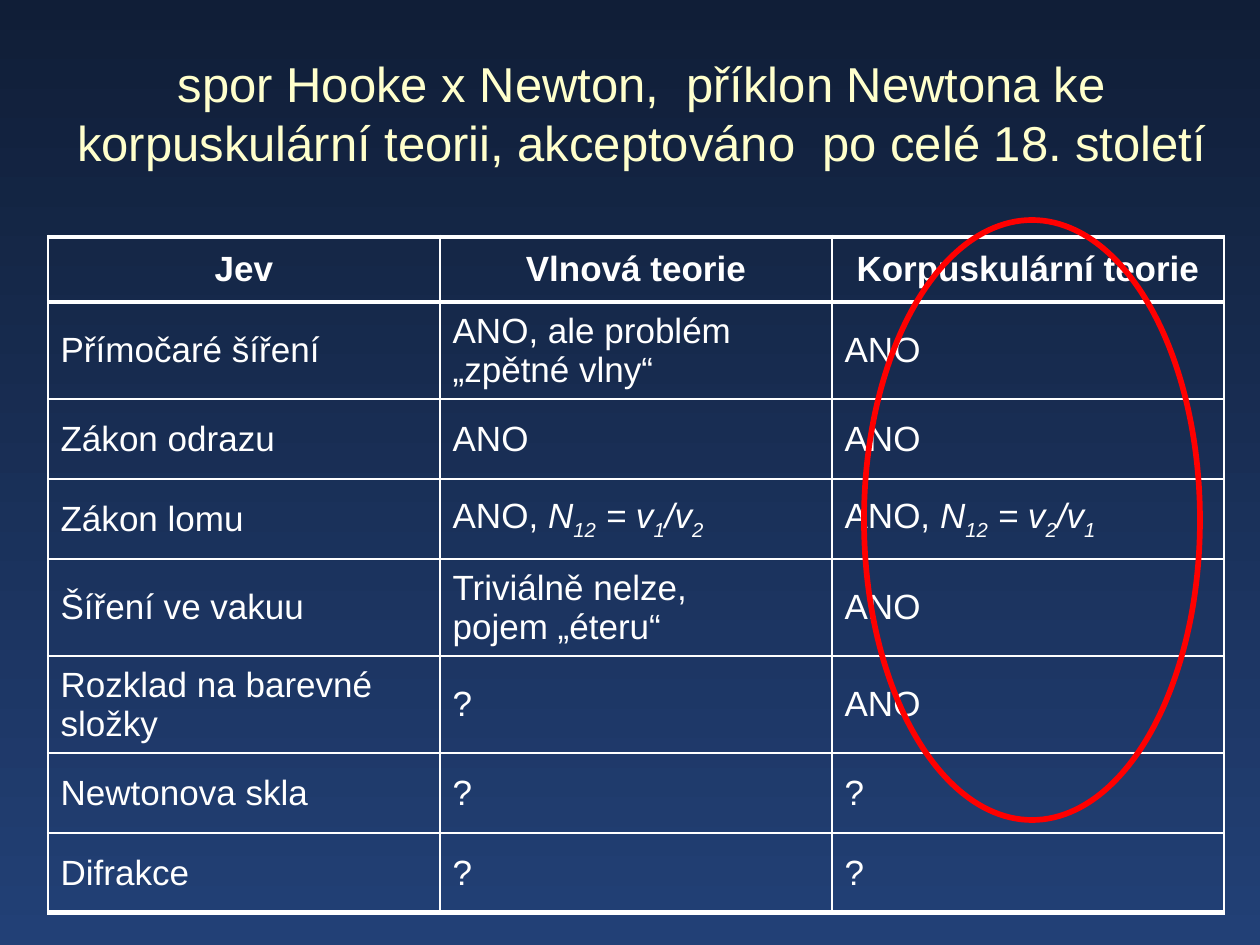
"""Build a slide comparing the wave and corpuscular theories of light."""
from lxml.etree import SubElement
from pptx import Presentation
from pptx.dml.color import RGBColor
from pptx.enum.shapes import MSO_SHAPE
from pptx.enum.text import MSO_ANCHOR, MSO_AUTO_SIZE, PP_ALIGN
from pptx.oxml.ns import qn
from pptx.util import Pt

PX = 914400 // 126
FONT = "Arial"
COLORS = {"top": "101E37", "bottom": "224076", "title": "FFFFCC",
          "white": "FFFFFF", "red": "FF0000"}

TITLE = "spor Hooke x Newton,  příklon Newtona ke korpuskulární teorii, akceptováno  po celé 18. století"
HEADINGS = ["Jev", "Vlnová teorie", "Korpuskulární teorie"]


def refraction(first, second):
    """Return the runs of the refraction law, as (text, style) pairs."""
    return [("ANO, ", ""), ("N", "i"), ("12", "sub"), (" = v", "i"),
            (first, "sub"), ("/v", "i"), (second, "sub")]


PHENOMENA = [
    ["Přímočaré šíření", "ANO, ale problém „zpětné vlny“", "ANO"],
    ["Zákon odrazu", "ANO", "ANO"],
    ["Zákon lomu", refraction("1", "2"), refraction("2", "1")],
    ["Šíření ve vakuu", "Triviálně nelze,\npojem „éteru“", "ANO"],
    ["Rozklad na barevné složky", "?", "ANO"],
    ["Newtonova skla", "?", "?"],
    ["Difrakce", "?", "?"],
]
ROW_HEIGHTS = [65, 97, 80, 80, 97, 97, 80, 80]
COLUMN_WIDTH = 392
TITLE_BOX = (23, 60, 1237, 105)
TABLE_ORIGIN = (48, 237)
ELLIPSE_BOX = (864, 220, 336, 600)
THIN, THICK = 1.5, 3


def px(*lengths):
    return [length * PX for length in lengths]


def rgb(name):
    return RGBColor.from_string(COLORS[name])


def write(frame, text, size=20, color="white", bold=False, align=PP_ALIGN.LEFT):
    paragraph = frame.paragraphs[0]
    paragraph.alignment = align
    runs = [(text, "")] if isinstance(text, str) else text
    for content, style in runs:
        for index, line in enumerate(content.split("\n")):
            if index:
                paragraph.add_line_break()
            run = paragraph.add_run()
            run.text = line
            run.font.name, run.font.size = FONT, Pt(size)
            run.font.bold, run.font.italic = bold, bool(style)
            run.font.color.rgb = rgb(color)
            if style == "sub":
                run.font._element.set("baseline", "-25000")


def set_borders(cell, top, bottom):
    properties = cell._tc.get_or_add_tcPr()
    widths = {"a:lnL": THIN, "a:lnR": THIN, "a:lnT": top, "a:lnB": bottom}
    for tag, width in widths.items():
        border = SubElement(properties, qn(tag), w=str(Pt(width)))
        fill = SubElement(border, qn("a:solidFill"))
        SubElement(fill, qn("a:srgbClr"), val=COLORS["white"])


def add_theory_table(slide):
    rows = [HEADINGS] + PHENOMENA
    size = (COLUMN_WIDTH * len(HEADINGS), sum(ROW_HEIGHTS))
    table = slide.shapes.add_table(len(rows), len(HEADINGS), *px(*TABLE_ORIGIN, *size)).table
    table.first_row = table.horz_banding = False
    for column in table.columns:
        column.width = COLUMN_WIDTH * PX
    for r, (texts, height) in enumerate(zip(rows, ROW_HEIGHTS)):
        heading = r == 0
        table.rows[r].height = height * PX
        top = THICK if r <= 1 else THIN
        bottom = THICK if r in (0, len(rows) - 1) else THIN
        for c, text in enumerate(texts):
            cell = table.cell(r, c)
            cell.vertical_anchor = MSO_ANCHOR.MIDDLE
            cell.margin_left = cell.margin_right = Pt(3.6 if heading else 7.2)
            cell.margin_top = cell.margin_bottom = Pt(3.6)
            write(cell.text_frame, text, bold=heading,
                  align=PP_ALIGN.CENTER if heading else PP_ALIGN.LEFT)
            set_borders(cell, top, bottom)
            cell.fill.background()


def main():
    deck = Presentation()
    deck.slide_width, deck.slide_height = px(1260, 945)
    slide = deck.slides.add_slide(deck.slide_layouts[5])

    background = slide.background.fill
    background.gradient()
    background.gradient_angle = 270
    for stop, name in zip(background.gradient_stops, ("top", "bottom")):
        stop.color.rgb = rgb(name)

    title = slide.shapes.title
    title.left, title.top, title.width, title.height = px(*TITLE_BOX)
    title.text_frame.auto_size = MSO_AUTO_SIZE.NONE
    title.text_frame.vertical_anchor = MSO_ANCHOR.MIDDLE
    write(title.text_frame, TITLE, size=28, color="title", align=PP_ALIGN.CENTER)

    add_theory_table(slide)

    highlight = slide.shapes.add_shape(MSO_SHAPE.OVAL, *px(*ELLIPSE_BOX))
    highlight.shadow.inherit = False
    highlight.fill.background()
    highlight.line.color.rgb = rgb("red")
    highlight.line.width = Pt(3.25)

    deck.save("out.pptx")


if __name__ == "__main__":
    main()
